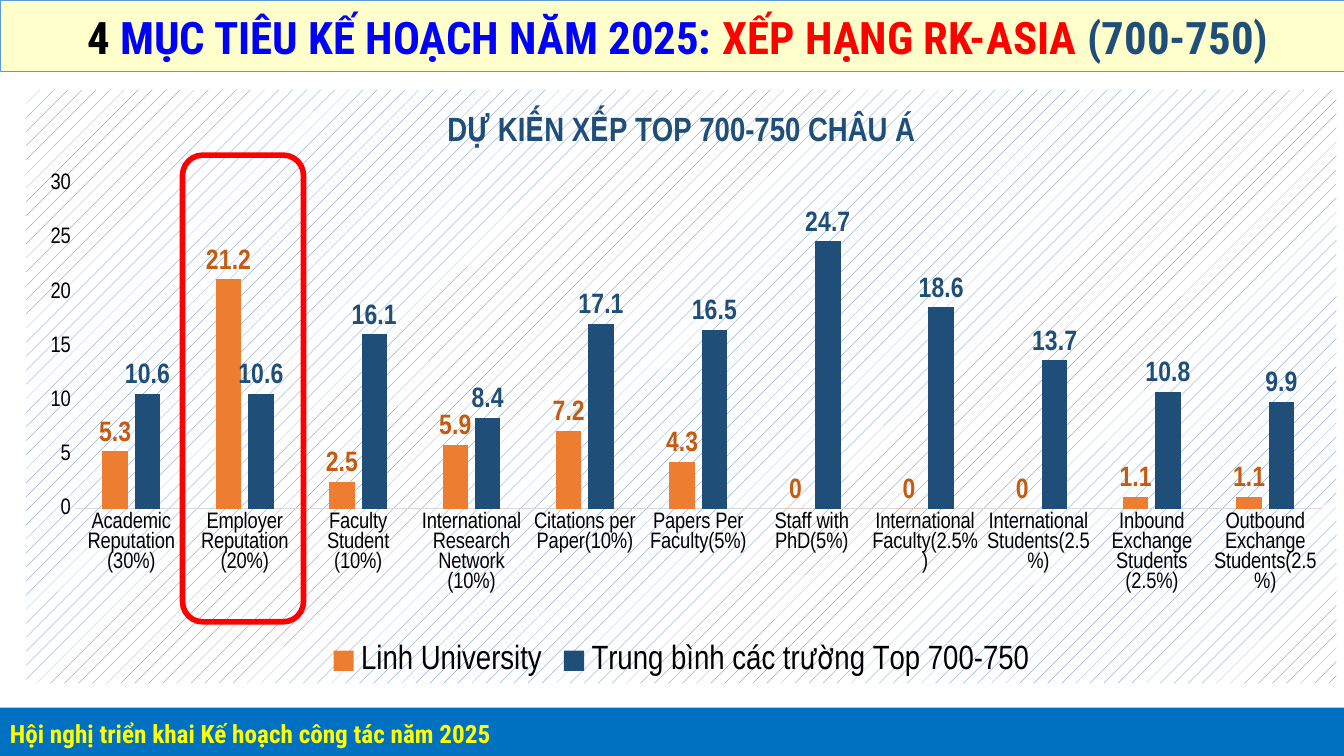
"""Build the slide on the 2025 Asian ranking target."""
from pptx import Presentation, util as u
from pptx.chart.data import CategoryChartData
from pptx.dml.color import RGBColor
from pptx.enum import chart as ch, shapes, text
from pptx.oxml import parse_xml
from pptx.oxml.ns import nsdecls, qn

HEADING_FONT, CHART_FONT = "Roboto Condensed", "Arial Narrow"
NAVY = "1F4E79"
HEADING = [
    ("4 ", "000000"),
    ("MỤC TIÊU KẾ HOẠCH NĂM 2025: ", "0000FF"),
    ("XẾP HẠNG RK-ASIA ", "FF0000"),
    ("(700-750)", NAVY),
]
FOOTER = [("Hội nghị triển khai Kế hoạch công tác năm 2025", "FFFF00")]
CHART_TITLE = "DỰ KIẾN XẾP TOP 700-750 CHÂU Á"
SERIES = [
    ("Linh University", "ED7D31", "C55A11", "General"),
    ("Trung bình các trường Top 700-750", NAVY, NAVY, "0.0"),
]
INDICATORS = [
    ("Academic Reputation (30%)", 5.3, 10.6),
    ("Employer Reputation (20%)", 21.2, 10.6),
    ("Faculty Student (10%)", 2.5, 16.1),
    ("International Research Network (10%)", 5.9, 8.4),
    ("Citations per Paper(10%)", 7.2, 17.1),
    ("Papers Per Faculty(5%)", 4.3, 16.5),
    ("Staff with PhD(5%)", 0, 24.7),
    ("International Faculty(2.5%)", 0, 18.6),
    ("International Students(2.5%)", 0, 13.7),
    ("Inbound Exchange Students (2.5%)", 1.1, 10.8),
    ("Outbound Exchange Students(2.5%)", 1.1, 9.9),
]
PLOT = {"x": 0.037, "y": 0.159, "w": 0.952, "h": 0.547}
WIDTH, HEIGHT = 33.87, 19.05


def rgb(code):
    """Return the colour for a hex string."""
    return RGBColor.from_string(code)


def style(font, name, size, color, bold=False):
    """Set the face, size, colour and weight of a font."""
    font.name, font.size, font.bold = name, u.Pt(size), bold
    font.color.rgb = rgb(color)


def add_box(s, kind, box, fill=None, line=None, width=0):
    """Add a preset shape without shadow."""
    sp = s.shapes.add_shape(kind, *map(u.Cm, box))
    sp.shadow.inherit = False
    if fill:
        sp.fill.solid()
        sp.fill.fore_color.rgb = rgb(fill)
    else:
        sp.fill.background()
    if line:
        sp.line.color.rgb = rgb(line)
        sp.line.width = u.Pt(width)
    else:
        sp.line.fill.background()
    return sp


def write(sp, runs, size, left):
    """Write one left-aligned bold line into a shape and return its paragraph."""
    tf = sp.text_frame
    tf.word_wrap = True
    tf.vertical_anchor = text.MSO_ANCHOR.MIDDLE
    tf.margin_left = u.Cm(left)
    p = tf.paragraphs[0]
    p.alignment = text.PP_ALIGN.LEFT
    for words, color in runs:
        r = p.add_run()
        r.text = words
        style(r.font, HEADING_FONT, size, color, True)
    return p


def set_chart_xml(chart):
    """Give the chart its patterned background and fixed plot area."""
    root = chart.element.find(qn("c:chart"))
    root.addnext(parse_xml(
        f'<c:spPr {nsdecls("c", "a")}><a:pattFill prst="pct5">'
        '<a:fgClr><a:srgbClr val="4472C4"/></a:fgClr>'
        '<a:bgClr><a:srgbClr val="FFFFFF"/></a:bgClr>'
        '</a:pattFill><a:ln><a:noFill/></a:ln></c:spPr>'))
    area = root.find(qn("c:plotArea"))
    for old in area.findall(qn("c:layout")):
        area.remove(old)
    modes = "".join(f'<c:{k}Mode val="edge"/>' for k in "xy")
    sizes = "".join(f'<c:{k} val="{v}"/>' for k, v in PLOT.items())
    area.insert(0, parse_xml(
        f'<c:layout {nsdecls("c")}><c:manualLayout><c:layoutTarget val="inner"/>'
        f'{modes}{sizes}</c:manualLayout></c:layout>'))


def add_ranking_chart(s, box):
    """Add the clustered columns comparing both series."""
    labels, *columns = zip(*INDICATORS)
    data = CategoryChartData()
    data.categories = labels
    for (name, *_), values in zip(SERIES, columns):
        data.add_series(name, values)
    chart = s.shapes.add_chart(
        ch.XL_CHART_TYPE.COLUMN_CLUSTERED, *map(u.Cm, box), data).chart
    style(chart.font, CHART_FONT, 16, "000000")

    chart.has_title = True
    r = chart.chart_title.text_frame.paragraphs[0].add_run()
    r.text = CHART_TITLE
    style(r.font, CHART_FONT, 24, NAVY, True)
    chart.has_legend = True
    chart.legend.position = ch.XL_LEGEND_POSITION.BOTTOM
    chart.legend.include_in_layout = False
    style(chart.legend.font, CHART_FONT, 24, "000000")

    for axis in (chart.category_axis, chart.value_axis):
        axis.has_major_gridlines = False
        axis.major_tick_mark = axis.minor_tick_mark = ch.XL_TICK_MARK.NONE
        style(axis.tick_labels.font, CHART_FONT, 16, "000000")
    line = chart.category_axis.format.line
    line.color.rgb, line.width = rgb("D9D9D9"), u.Pt(0.75)
    axis = chart.value_axis
    axis.format.line.fill.background()
    axis.minimum_scale, axis.maximum_scale, axis.major_unit = 0, 30, 5

    plot = chart.plots[0]
    plot.gap_width, plot.overlap, plot.vary_by_categories = 219, -27, False
    for series, (_, fill, color, fmt) in zip(plot.series, SERIES):
        series.invert_if_negative = False
        series.format.fill.solid()
        series.format.fill.fore_color.rgb = rgb(fill)
        d = series.data_labels
        d.show_value = True
        d.position = ch.XL_LABEL_POSITION.OUTSIDE_END
        d.number_format, d.number_format_is_linked = fmt, False
        style(d.font, CHART_FONT, 20, color, True)
    set_chart_xml(chart)


def main():
    """Lay out the slide and save it."""
    prs = Presentation()
    prs.slide_width, prs.slide_height = u.Cm(WIDTH), u.Cm(HEIGHT)
    s = prs.slides.add_slide(prs.slide_layouts[6])
    rect = shapes.MSO_SHAPE.RECTANGLE

    banner = add_box(s, rect, (0, 0.02, WIDTH, 1.78), "FFFFCC", "5B9BD5", 0.5)
    write(banner, HEADING, 32, 2.2)
    footer = add_box(s, rect, (0, 17.83, WIDTH, HEIGHT - 17.83), "0070C0")
    p = write(footer, FOOTER, 18, 0.25)
    p.line_spacing, p.space_before, p.space_after = 1.1, u.Pt(12), u.Pt(6)

    add_ranking_chart(s, (0.66, 2.26, 33.02, 14.96))
    add_box(s, shapes.MSO_SHAPE.ROUNDED_RECTANGLE, (4.6, 3.91, 3.05, 11.76),
            line="FF0000", width=4)
    prs.save("out.pptx")


if __name__ == "__main__":
    main()
